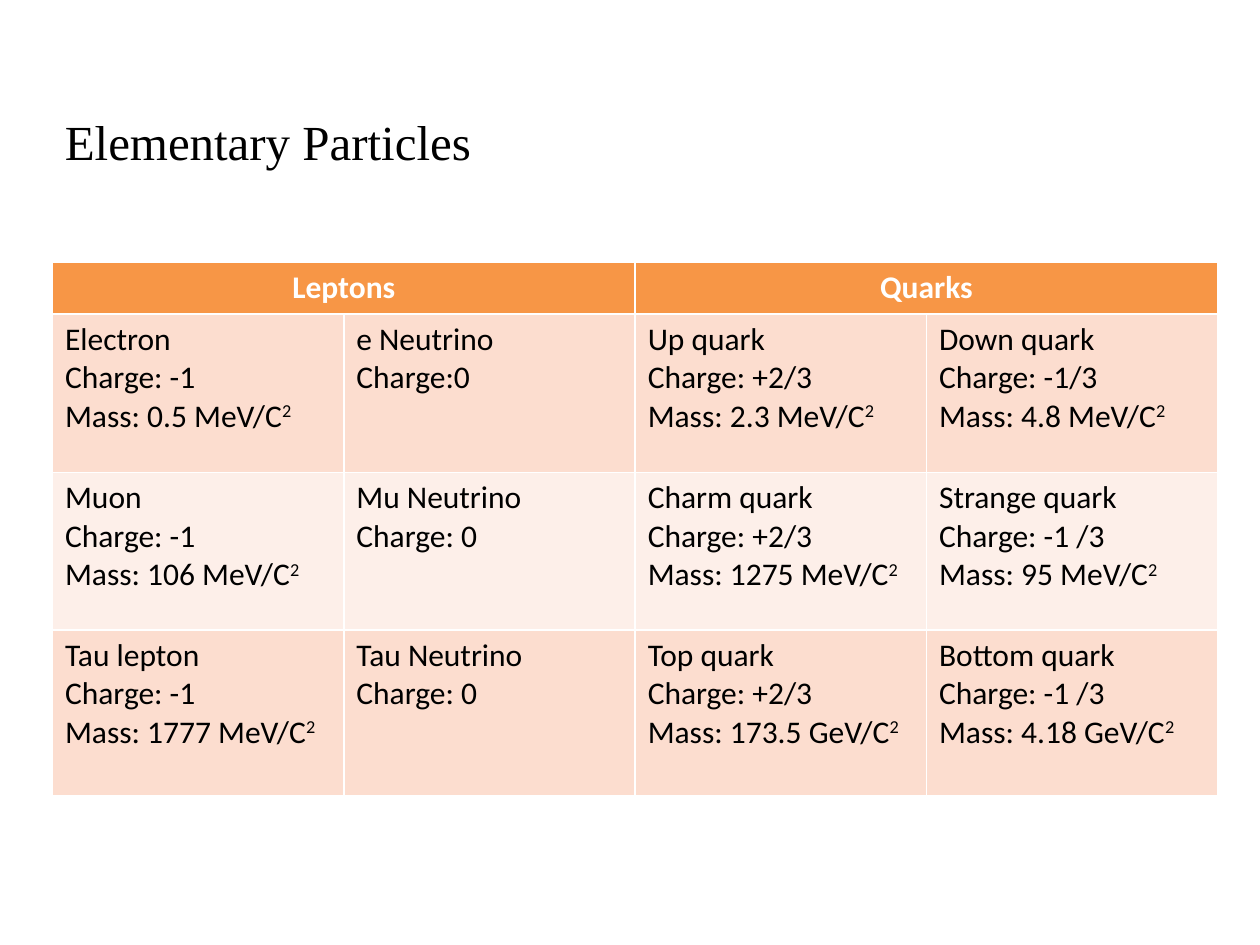
import pptx
import pptx.util
import pptx.dml.color
import pptx.enum.text

Pt = pptx.util.Pt

FAMILIES = ["Leptons", "Quarks"]
GENERATIONS = [
    [("Electron", "Charge: -1", "Mass: 0.5 MeV/C"),
     ("e Neutrino", "Charge:0"),
     ("Up quark", "Charge: +2/3", "Mass: 2.3 MeV/C"),
     ("Down quark", "Charge: -1/3", "Mass: 4.8 MeV/C")],
    [("Muon", "Charge: -1", "Mass: 106 MeV/C"),
     ("Mu Neutrino", "Charge: 0"),
     ("Charm quark", "Charge: +2/3", "Mass: 1275 MeV/C"),
     ("Strange quark", "Charge: -1 /3", "Mass: 95 MeV/C")],
    [("Tau lepton", "Charge: -1", "Mass: 1777 MeV/C"),
     ("Tau Neutrino", "Charge: 0"),
     ("Top quark", "Charge: +2/3", "Mass: 173.5 GeV/C"),
     ("Bottom quark", "Charge: -1 /3", "Mass: 4.18 GeV/C")],
]
ROW_HEIGHTS = [29.5, 90.5, 90, 95]
BANDS = ["FCDDCF", "FDEFE9"]


def color(hex_value):
    """Return the colour for a hex string."""
    return pptx.dml.color.RGBColor.from_string(hex_value)


def style(paragraph, size, face, hex_value, bold=False):
    """Set the font of a whole paragraph."""
    font = paragraph.font
    font.size, font.name, font.bold = Pt(size), face, bold
    font.color.rgb = color(hex_value)


def fill_cell(cell, hex_value):
    """Give a table cell a solid fill."""
    cell.fill.solid()
    cell.fill.fore_color.rgb = color(hex_value)


def write_particle(cell, facts):
    """Write one particle's facts, squaring the unit of its mass."""
    frame = cell.text_frame
    for index, fact in enumerate(facts):
        line = frame.add_paragraph() if index else frame.paragraphs[0]
        style(line, 18, "Calibri", "000000")
        line.add_run().text = fact
        if fact.startswith("Mass"):
            exponent = line.add_run()
            exponent.text = "2"
            exponent.font._element.set("baseline", "30000")


def add_title(slide, left, top, width, height):
    """Place the slide title in the given box."""
    title = slide.shapes.add_textbox(Pt(left), Pt(top), Pt(width), Pt(height))
    title.text_frame.word_wrap = True
    heading = title.text_frame.paragraphs[0]
    heading.text = "Elementary Particles"
    style(heading, 28, "Times New Roman", "000000")


def add_particle_table(slide, left, top, width, height):
    """Place the table of leptons and quarks in the given box."""
    columns = len(GENERATIONS[0])
    particles = slide.shapes.add_table(
        len(ROW_HEIGHTS), columns, Pt(left), Pt(top), Pt(width), Pt(height)).table
    for row, row_height in zip(particles.rows, ROW_HEIGHTS):
        row.height = Pt(row_height)

    span = columns // len(FAMILIES)
    for index, family in enumerate(FAMILIES):
        header = particles.cell(0, index * span)
        header.merge(particles.cell(0, (index + 1) * span - 1))
        fill_cell(header, "F79646")
        label = header.text_frame.paragraphs[0]
        label.text = family
        label.alignment = pptx.enum.text.PP_ALIGN.CENTER
        style(label, 18, "Calibri", "FFFFFF", bold=True)

    for row, generation in enumerate(GENERATIONS, start=1):
        for column, facts in enumerate(generation):
            cell = particles.cell(row, column)
            fill_cell(cell, BANDS[(row - 1) % len(BANDS)])
            write_particle(cell, facts)


def main():
    """Build and save the slide."""
    deck = pptx.Presentation()
    deck.slide_width, deck.slide_height = Pt(720), Pt(540)
    slide = deck.slides.add_slide(deck.slide_layouts[6])
    add_particle_table(slide, 30, 150, 666, sum(ROW_HEIGHTS))
    add_title(slide, 30, 60, 282, 41)
    deck.save("out.pptx")


if __name__ == "__main__":
    main()
